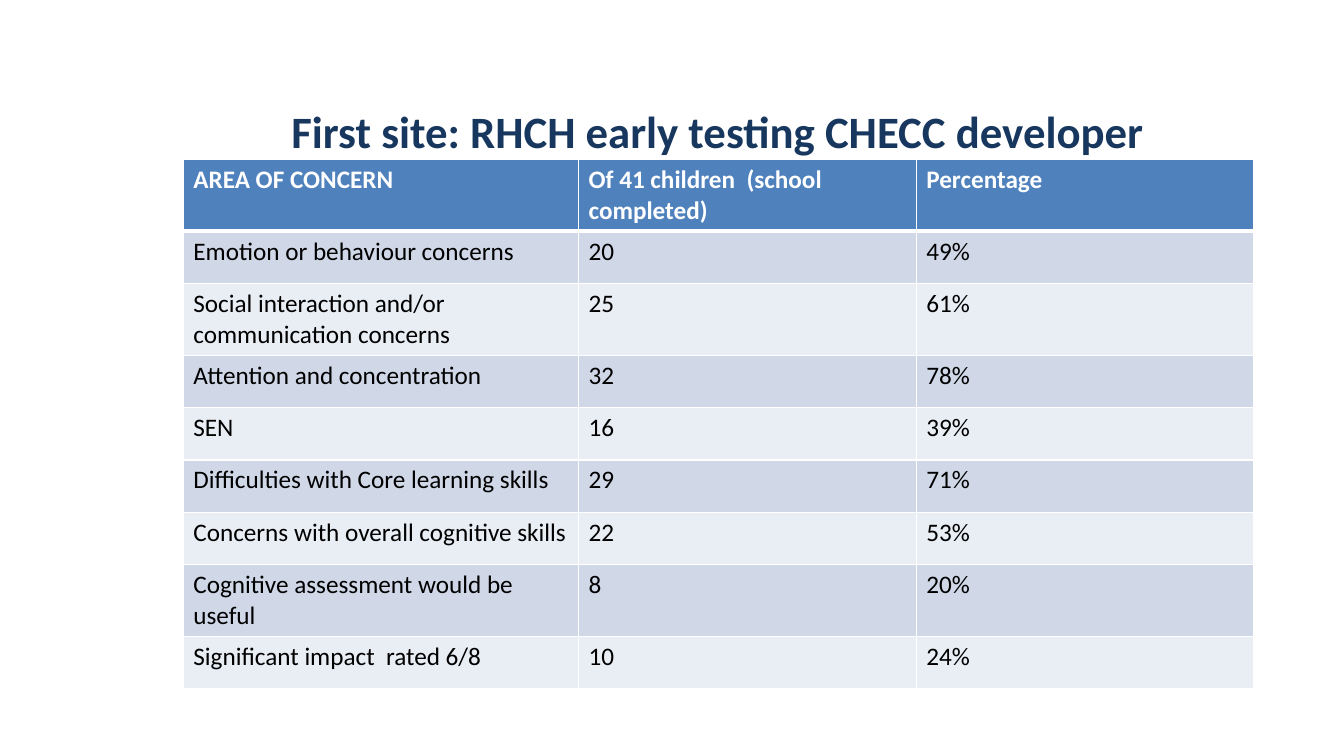
import pptx
import pptx.dml.color
import pptx.enum.text
import pptx.util
from lxml import etree

Cm = pptx.util.Cm
Pt = pptx.util.Pt
NS = "http://schemas.openxmlformats.org/drawingml/2006/main"

COLORS = {
    "title": "17375E",
    "head": "4F81BD",
    "odd": "D0D8E8",
    "even": "E9EDF4",
    "white": "FFFFFF",
    "black": "000000",
}
TITLE = {"name": "Calibri", "size": Pt(32), "bold": True}
HEAD = {"name": "Calibri", "size": Pt(18), "bold": True}
BODY = {**HEAD, "bold": False}

WIDTHS = (9.96, 8.51, 8.51)
ONE, TWO = 1.32, 1.73
ROWS = [
    (TWO, "AREA OF CONCERN", "Of 41 children  (school completed)", "Percentage"),
    (ONE, "Emotion or behaviour concerns", "20", "49%"),
    (TWO, "Social interaction and/or communication concerns", "25", "61%"),
    (ONE, "Attention and concentration", "32", "78%"),
    (ONE, "SEN", "16", "39%"),
    (ONE, "Difficulties with Core learning skills", "29", "71%"),
    (ONE, "Concerns with overall cognitive skills", "22", "53%"),
    (TWO, "Cognitive assessment would be useful", "8", "20%"),
    (ONE, "Significant impact  rated 6/8", "10", "24%"),
]


def color(key):
    return pptx.dml.color.RGBColor.from_string(COLORS[key])


def style(font, look, key):
    for name, value in look.items():
        setattr(font, name, value)
    font.color.rgb = color(key)


def border(cell, sides):
    props = cell._tc.get_or_add_tcPr()
    for index, (side, points) in enumerate(sides.items()):
        line = etree.Element(f"{{{NS}}}ln{side}", w=str(Pt(points)))
        fill = etree.SubElement(line, f"{{{NS}}}solidFill")
        etree.SubElement(fill, f"{{{NS}}}srgbClr", val=COLORS["white"])
        props.insert(index, line)


def add_title(slide, left, top, width, height):
    title = slide.shapes.title
    place = {"left": left, "top": top, "width": width, "height": height}
    for name, value in place.items():
        setattr(title, name, Cm(value))
    frame = title.text_frame
    frame.text = "First site: RHCH early testing CHECC developer"
    frame.word_wrap = True
    frame.auto_size = pptx.enum.text.MSO_AUTO_SIZE.NONE
    frame.vertical_anchor = pptx.enum.text.MSO_ANCHOR.TOP
    para = frame.paragraphs[0]
    para.alignment = pptx.enum.text.PP_ALIGN.CENTER
    style(para.font, TITLE, "title")


def add_grid(slide, left, top, width, height):
    box = [Cm(value) for value in (left, top, width, height)]
    table = slide.shapes.add_table(len(ROWS), len(WIDTHS), *box).table
    for column, size in zip(table.columns, WIDTHS):
        column.width = Cm(size)
    for index, (size, *texts) in enumerate(ROWS):
        table.rows[index].height = Cm(size)
        shade = "head" if index == 0 else "odd" if index % 2 else "even"
        look, ink = (BODY, "black") if index else (HEAD, "white")
        sides = {"L": 1, "R": 1, "T": 3 if index == 1 else 1, "B": 1 if index else 3}
        for cell, text in zip(table.rows[index].cells, texts):
            cell.text = text
            cell.fill.solid()
            cell.fill.fore_color.rgb = color(shade)
            style(cell.text_frame.paragraphs[0].font, look, ink)
            border(cell, sides)


def main():
    deck = pptx.Presentation()
    deck.slide_width = Cm(33.87)
    deck.slide_height = Cm(19.05)
    slide = deck.slides.add_slide(deck.slide_layouts[5])
    add_title(slide, 4.22, 2.49, 27.74, 1.55)
    add_grid(slide, 4.62, 4.02, sum(WIDTHS), sum(row[0] for row in ROWS))
    deck.save("out.pptx")


if __name__ == "__main__":
    main()
